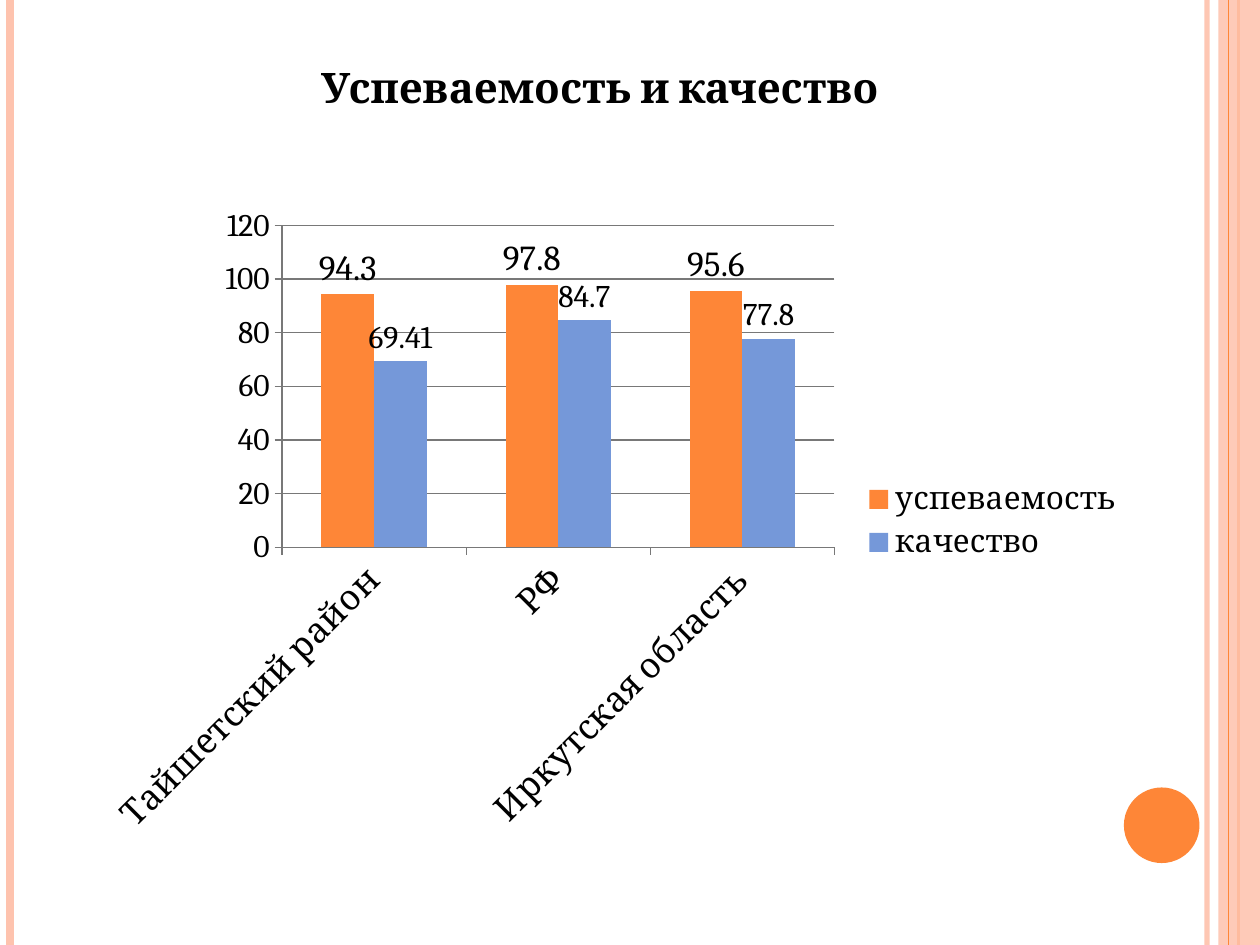
from lxml.etree import SubElement
from pptx import Presentation
from pptx.chart.data import CategoryChartData
from pptx.dml.color import RGBColor
from pptx.enum.chart import XL_CHART_TYPE as ChartType, XL_LABEL_POSITION as LabelPosition
from pptx.enum.chart import XL_LEGEND_POSITION as LegendPosition, XL_TICK_MARK as TickMark
from pptx.enum.shapes import MSO_CONNECTOR as Connector, MSO_SHAPE as Shape
from pptx.enum.text import PP_ALIGN as Align
from pptx.oxml import parse_xml
from pptx.oxml.ns import nsdecls, qn
from pptx.util import Inches, Pt

FONT = "Cambria"
ORANGE, PEACH, BLUE, GRAY, BLACK = "FE8637", "FEC3AE", "7598D9", "787878", "000000"

TITLE = "Успеваемость и качество"
CATEGORIES = ["Тайшетский район", "РФ", "Иркутская область"]
# name, values, colour, label size
SERIES = [
    ("успеваемость", [94.3, 97.8, 95.6], ORANGE, 20),
    ("качество", [69.41, 84.7, 77.8], BLUE, 18),
]
# x, colour, width, opacity in percent
BACK_STRIPES = [(9.58, PEACH, 3, 93), (0.08, PEACH, 4.5, 100), (9.83, ORANGE, 1.5, 100)]
FRONT_STRIPES = [(9.75, ORANGE, 0.75, 100)]
# inner plot area as shares of the chart
PLOT = {"x": 0.18, "y": 0.05, "w": 0.53, "h": 0.49}


def color(value):
    return RGBColor.from_string(value)


def set_opacity(element, percent):
    if percent < 100:
        tint = next(element.iter(qn("a:srgbClr")))
        SubElement(tint, qn("a:alpha"), val=str(percent * 1000))


def add_stripes(page, stripes):
    for x, tone, width, opacity in stripes:
        stripe = page.shapes.add_connector(
            Connector.STRAIGHT, Inches(x), 0, Inches(x), Inches(7.5))
        stripe.line.color.rgb = color(tone)
        stripe.line.width = Pt(width)
        properties = stripe._element.spPr
        set_opacity(properties, opacity)
        SubElement(properties, qn("a:effectLst"))


def add_solid(page, kind, place, tone, opacity=100):
    shape = page.shapes.add_shape(kind, *map(Inches, place))
    shape.shadow.inherit = False
    shape.fill.solid()
    shape.fill.fore_color.rgb = color(tone)
    shape.line.fill.background()
    set_opacity(shape._element.spPr, opacity)


def set_font(font, size):
    font.name = FONT
    font.size = Pt(size)
    font.color.rgb = color(BLACK)


deck = Presentation()
deck.slide_width, deck.slide_height = Inches(10), Inches(7.5)
page = deck.slides.add_slide(deck.slide_layouts[6])

# Side stripes and disc
add_stripes(page, BACK_STRIPES)
add_solid(page, Shape.RECTANGLE, (9.67, 0, 0.33, 7.5), PEACH, 87)
add_stripes(page, FRONT_STRIPES)
add_solid(page, Shape.OVAL, (8.92, 6.25, 0.6, 0.6), ORANGE)

# Title
box = page.shapes.add_textbox(*map(Inches, (0.5, 0.44, 8.52, 6.64)))
box.text_frame.word_wrap = True
para = box.text_frame.paragraphs[0]
para.text = TITLE
para.alignment = Align.CENTER
para.space_before = Pt(6)
set_font(para.font, 24)
para.font.bold = True

# Chart
data = CategoryChartData()
data.categories = CATEGORIES
for name, values, tone, label_size in SERIES:
    data.add_series(name, values)
chart = page.shapes.add_chart(
    ChartType.COLUMN_CLUSTERED, *map(Inches, (0.75, 1.53, 8.27, 5.21)), data).chart
set_font(chart.font, 18)
chart.has_title = False
chart.has_legend = True
chart.legend.position = LegendPosition.RIGHT
chart.legend.include_in_layout = False

plot = chart.plots[0]
plot.gap_width = 150
plot.overlap = 0
plot.vary_by_categories = False
for series, (name, values, tone, label_size) in zip(plot.series, SERIES):
    series.format.fill.solid()
    series.format.fill.fore_color.rgb = color(tone)
    series.invert_if_negative = False
    labels = series.data_labels
    labels.show_value = True
    labels.position = LabelPosition.OUTSIDE_END
    set_font(labels.font, label_size)

# Axes
for axis, size in ((chart.category_axis, 20), (chart.value_axis, 18)):
    axis.major_tick_mark = TickMark.OUTSIDE
    axis.minor_tick_mark = TickMark.NONE
    axis.format.line.color.rgb = color(GRAY)
    set_font(axis.tick_labels.font, size)
chart.category_axis._element.find(qn("c:txPr")).find(qn("a:bodyPr")).set("rot", "-2700000")
scale = chart.value_axis
scale.minimum_scale, scale.maximum_scale, scale.major_unit = 0, 120, 20
scale.has_major_gridlines = True
scale.major_gridlines.format.line.color.rgb = color(GRAY)

# Fixed plot area, leaving room for the slanted labels
area = chart._chartSpace.chart.plotArea
for layout in area.findall(qn("c:layout")):
    area.remove(layout)
sides = "".join(f'<c:{side}Mode val="edge"/>' for side in "xy")
sizes = "".join(f'<c:{key} val="{share}"/>' for key, share in PLOT.items())
area.insert(0, parse_xml(
    f'<c:layout {nsdecls("c")}><c:manualLayout><c:layoutTarget val="inner"/>'
    f"{sides}{sizes}</c:manualLayout></c:layout>"))

deck.save("out.pptx")
